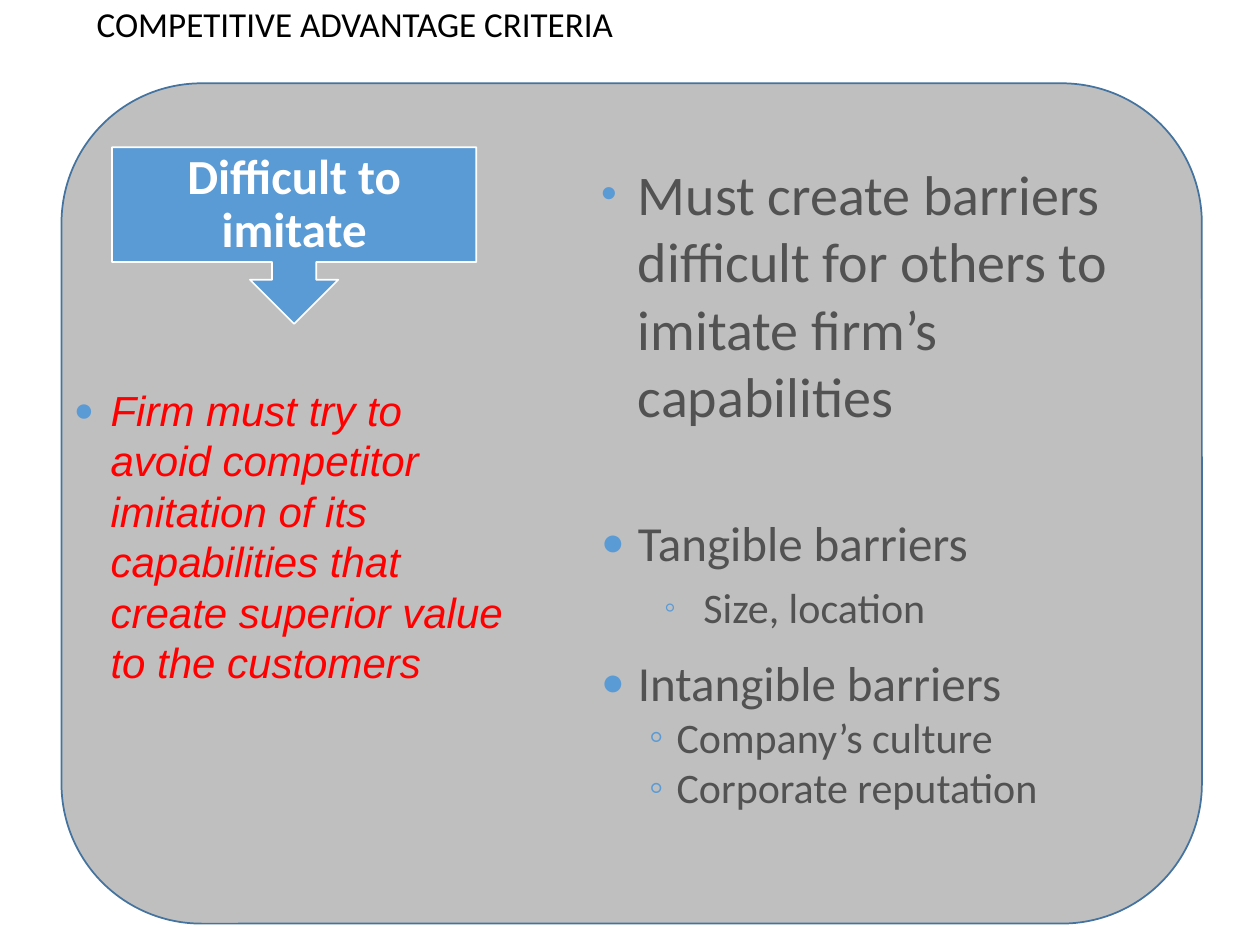
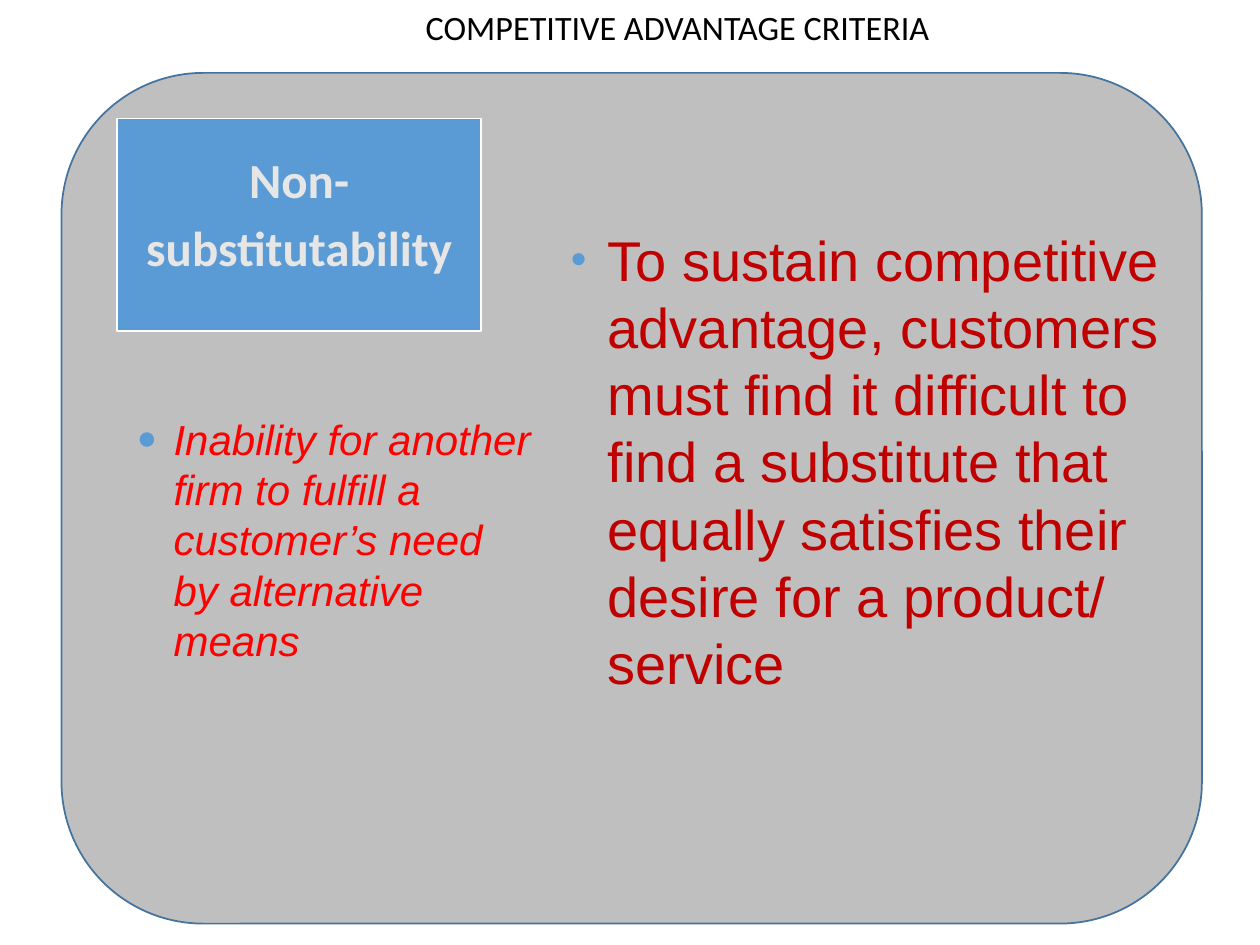
from lxml.etree import SubElement
from pptx import Presentation
from pptx.dml.color import RGBColor
from pptx.enum.shapes import MSO_SHAPE
from pptx.enum.text import MSO_ANCHOR, PP_ALIGN
from pptx.oxml.ns import qn
from pptx.util import Cm, Pt

HUES = {
    "panel": "BFBFBF", "edge": "43739E", "blue": "5B9BD5", "white": "FFFFFF",
    "pale": "E7E6E6", "black": "000000", "grey": "525252", "red": "FF0000",
    "dark": "C00000",
}
TITLE = "COMPETITIVE ADVANTAGE CRITERIA"


def block(slide, place, kind=None, fill=None, edge=None, pads=(0.25, 0.13, 0.25, 0.13)):
    """Add a filled shape, or a text box if no kind is given; return its text frame."""
    spot = [Cm(n) for n in place]
    if kind is None:
        shape = slide.shapes.add_textbox(*spot)
    else:
        shape = slide.shapes.add_shape(kind, *spot)
        shape.shadow.inherit = False
        shape.fill.solid()
        shape.fill.fore_color.rgb = RGBColor.from_string(HUES[fill])
        shape.line.color.rgb = RGBColor.from_string(HUES[edge])
        shape.line.width = Pt(1)
    frame = shape.text_frame
    frame.word_wrap = True
    frame.margin_left, frame.margin_top, frame.margin_right, frame.margin_bottom = [
        Cm(n) for n in pads]
    return frame


def write(frame, text, size, hue, face="Calibri", bold=False, slant=False,
          align=PP_ALIGN.LEFT, lead=None, before=0, mark=None, scale=80,
          left=0.74, hang=0.74, level=0):
    """Add a paragraph, reusing the empty first one; mark is its bullet."""
    para = frame.paragraphs[0]
    if para.runs:
        para = frame.add_paragraph()
        para.space_before = Pt(before)
    para.text = text
    para.alignment = align
    para.level = level
    if lead:
        para.line_spacing = lead
    if mark:
        props = para._p.get_or_add_pPr()
        props.set("marL", str(Cm(left)))
        props.set("indent", str(-Cm(hang)))
        tint = SubElement(props, qn("a:buClr"))
        SubElement(tint, qn("a:srgbClr")).set("val", HUES["blue"])
        SubElement(props, qn("a:buSzPct")).set("val", str(scale * 1000))
        SubElement(props, qn("a:buFont")).set("typeface", "Arial")
        SubElement(props, qn("a:buChar")).set("char", mark)
    font = para.runs[0].font
    font.size, font.name, font.bold, font.italic = Pt(size), face, bold, slant
    font.color.rgb = RGBColor.from_string(HUES[hue])


deck = Presentation()
deck.slide_width, deck.slide_height = Cm(25.4), Cm(19.05)

# Panel top, title size and alignment, then the red claim and its place
pages = [
    (1.68, 20, PP_ALIGN.LEFT, 0.9, (1.24, 7.62, 9.32, 6.4),
     "Firm must try to avoid competitor imitation of its capabilities "
     "that create superior value to the customers"),
    (1.47, 19.5, PP_ALIGN.CENTER, None, (2.51, 8.2, 8.48, 5.38),
     "Inability for another firm to fulfill a customer’s need by alternative means"),
]
slides = []
for top, size, align, lead, place, claim in pages:
    slide = deck.slides.add_slide(deck.slide_layouts[6])
    block(slide, (1.24, top, 22.99, 18.62 - top),
          MSO_SHAPE.ROUNDED_RECTANGLE, "panel", "edge")
    head = block(slide, (1.7, 0, 23.93, 1.07))
    head.vertical_anchor = MSO_ANCHOR.MIDDLE
    write(head, TITLE, size, "black", align=align, lead=lead)
    write(block(slide, place), claim, 24, "red", "Arial", slant=True, mark="●")
    slides.append(slide)
first, second = slides
inset = (0.51, 0.25, 0.25, 0.13)

# Difficult to imitate
label = block(first, (2.26, 2.97, 7.34, 3.56), MSO_SHAPE.DOWN_ARROW_CALLOUT,
              "blue", "white", (0.41,) * 4)
label.vertical_anchor = MSO_ANCHOR.MIDDLE
write(label, "Difficult to imitate", 28, "white", bold=True,
      align=PP_ALIGN.CENTER, lead=0.9)

notes = block(first, (11.61, 2.97, 12.32, 12.98), pads=inset)
write(notes, "Must create barriers difficult for others to imitate firm’s capabilities",
      32, "grey", mark="•")
write(notes, "Tangible barriers", 28, "grey", before=48, mark="●")
write(notes, "Size, location", 24, "grey", before=6, mark="◦",
      left=2.06, hang=0.79, level=1)
write(notes, "Intangible barriers", 28, "grey", before=11.5, mark="●")
for text in ("Company’s culture", "Corporate reputation"):
    write(notes, text, 24, "grey", mark="◦", scale=100, left=1.52, hang=0.56, level=1)

# Non-substitutability
label = block(second, (2.36, 2.39, 7.34, 4.29), MSO_SHAPE.RECTANGLE,
              "blue", "white", (0.41, 0.41, 0.41, 0.89))
label.vertical_anchor = MSO_ANCHOR.MIDDLE
for text, lead in (("Non-", None), ("substitutability", 0.9)):
    write(label, text, 28, "pale", bold=True, align=PP_ALIGN.CENTER, lead=lead, before=9)

notes = block(second, (11, 4.29, 13.23, 11.66), pads=inset)
write(notes, "To sustain competitive advantage, customers must find it difficult to "
      "find a substitute that equally satisfies their desire for a product/ service",
      32, "dark", "Arial", mark="•")

deck.save("out.pptx")
